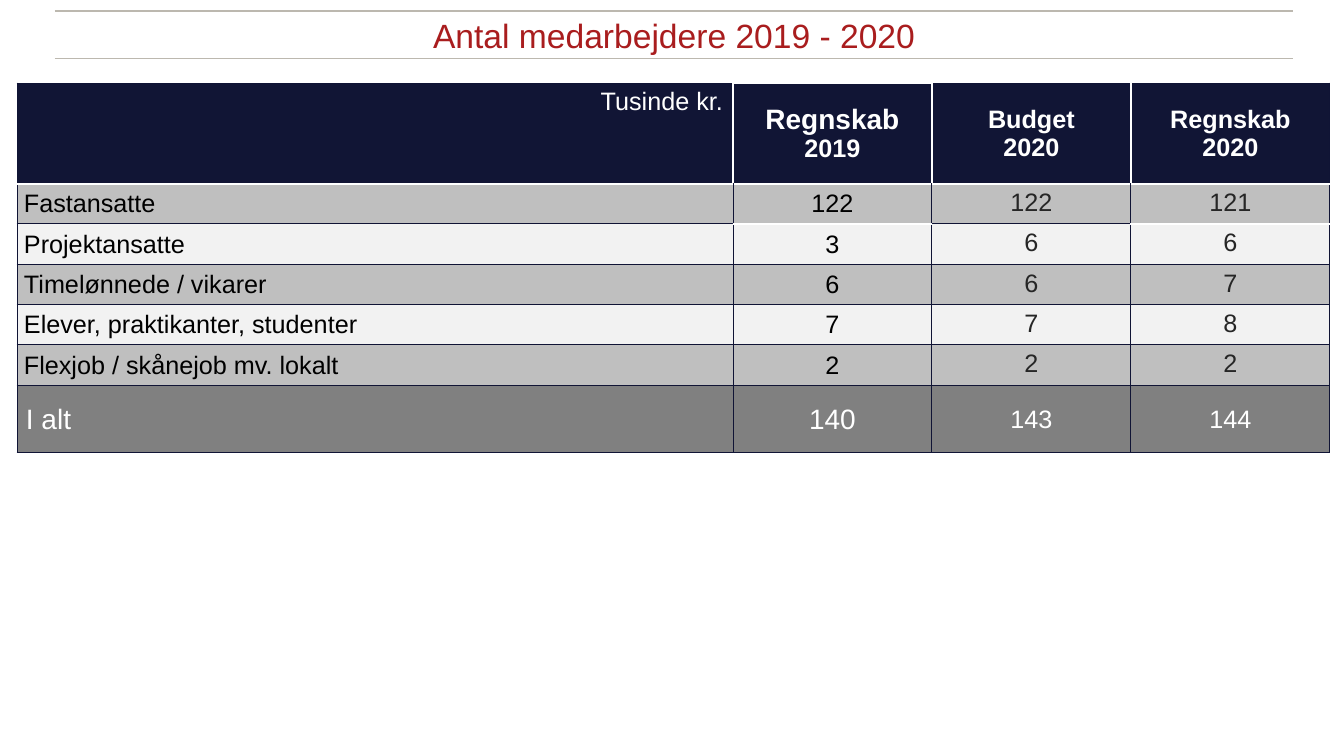
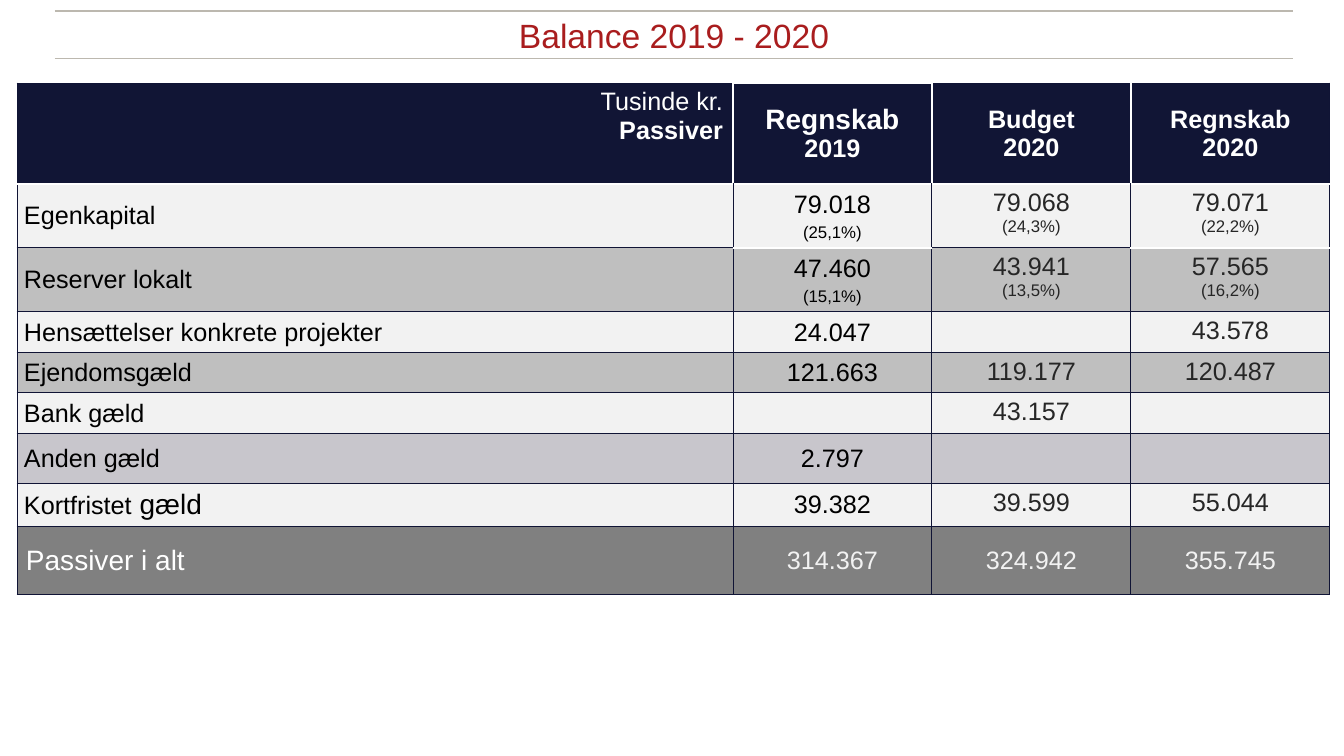
from lxml import etree
from pptx import Presentation
from pptx.dml.color import RGBColor
from pptx.enum.shapes import MSO_CONNECTOR
from pptx.enum.text import MSO_ANCHOR, MSO_AUTO_SIZE, PP_ALIGN
from pptx.oxml.ns import qn
from pptx.util import Pt

LEFT, CENTER, RIGHT = PP_ALIGN.LEFT, PP_ALIGN.CENTER, PP_ALIGN.RIGHT
TOP, MIDDLE = MSO_ANCHOR.TOP, MSO_ANCHOR.MIDDLE
STRAIGHT = MSO_CONNECTOR.STRAIGHT
NO_FIT = MSO_AUTO_SIZE.NONE

# Shared style
FONT = "Arial"
COLORS = {
    "title": "A91D1E", "rule": "BCB8AF", "header": "111535",
    "border": "101435", "white": "FFFFFF", "black": "000000",
    "text": "262626", "light": "F2F2F2", "grey": "BFBFBF",
    "lilac": "C8C6CC", "total": "808080",
}
SLIDE_W, SLIDE_H = 1344, 756
TITLE_BOX = (55, 9, 1238, 52)
RULE_YS = (11, 59)
TABLE_LEFT, TABLE_TOP = 17, 83
COL_WIDTHS = (716, 199, 199, 199)
HEADER_H = 101

# Content: a cell is a list of lines, a line is a string or a list of
# (text, format) runs
BIG, SMALL, BOLD = {"size": 20}, {"size": 12}, {"bold": True}
HEADINGS = [
    [[("Regnskab", {"size": 20, "bold": True})], [("2019", BOLD)]],
    [[("Budget", BOLD)], [("2020", BOLD)]],
    [[("Regnskab", BOLD)], [("2020", BOLD)]],
]


def with_share(value, share):
    return [value, [(share, SMALL)]]


SLIDES = [
    {
        "title": "Antal medarbejdere 2019 - 2020",
        "corner": ["Tusinde kr."],
        "rows": [  # height, fill, label, values
            (40, "grey", ["Fastansatte"], [["122"], ["122"], ["121"]]),
            (41, "light", ["Projektansatte"], [["3"], ["6"], ["6"]]),
            (40, "grey", ["Timelønnede / vikarer"], [["6"], ["6"], ["7"]]),
            (40, "light", ["Elever, praktikanter, studenter"],
             [["7"], ["7"], ["8"]]),
            (41, "grey", ["Flexjob / skånejob mv. lokalt"],
             [["2"], ["2"], ["2"]]),
            (67, "total", [[("I alt", BIG)]],
             [[[("140", BIG)]], ["143"], ["144"]]),
        ],
        "total_color": "white",
    },
    {
        "title": "Balance 2019 - 2020",
        "corner": ["Tusinde kr.", [("Passiver", BOLD)]],
        "rows": [
            (64, "light", ["Egenkapital"],
             [with_share("79.018", "(25,1%)"), with_share("79.068", "(24,3%)"),
              with_share("79.071", "(22,2%)")]),
            (64, "grey", ["Reserver lokalt"],
             [with_share("47.460", "(15,1%)"), with_share("43.941", "(13,5%)"),
              with_share("57.565", "(16,2%)")]),
            (40, "light", ["Hensættelser konkrete projekter"],
             [["24.047"], [], ["43.578"]]),
            (40, "grey", ["Ejendomsgæld"],
             [["121.663"], ["119.177"], ["120.487"]]),
            (41, "light", ["Bank gæld"], [[], ["43.157"], []]),
            (50, "lilac", ["Anden gæld"], [["2.797"], [], []]),
            (43, "light", [[("Kortfristet", {}), (" gæld", BIG)]],
             [["39.382"], ["39.599"], ["55.044"]]),
            (68, "total", [[("Passiver i alt", BIG)]],
             [["314.367"], ["324.942"], ["355.745"]]),
        ],
        "total_color": "light",
    },
]


def px(n):
    return round(n * 914400 / 100.8)


def rgb(name):
    return RGBColor.from_string(COLORS[name])


def set_all(obj, values):
    for name, value in values.items():
        setattr(obj, name, value)


def style_font(font, color, size=18, bold=False):
    set_all(font, {"name": FONT, "size": Pt(size), "bold": bold})
    font.color.rgb = rgb(color)


# Title between two thin rules
def add_title(s, text):
    for y in RULE_YS:
        x, _, w, _ = TITLE_BOX
        line = s.shapes.add_connector(STRAIGHT, px(x), px(y), px(x + w), px(y))
        line.line.color.rgb = rgb("rule")
        line.line.width = Pt(0.75)
        etree.SubElement(line._element.spPr, qn("a:effectLst"))
    title = s.shapes.title
    set_all(title, dict(zip(("left", "top", "width", "height"),
                            map(px, TITLE_BOX))))
    tf = title.text_frame
    set_all(tf, {"word_wrap": True, "auto_size": NO_FIT,
                 "vertical_anchor": MIDDLE})
    set_all(tf, {"margin_" + side: px(6)
                 for side in ("left", "top", "right", "bottom")})
    p = tf.paragraphs[0]
    p.alignment = CENTER
    r = p.add_run()
    r.text = text
    style_font(r.font, "title", 24)


# Borders: the rule for an edge holds for the cells on both its sides
def upright_edge(row, k):
    inner_header = row == 0 and 0 < k < len(COL_WIDTHS)
    return ("white", 1) if inner_header else ("border", 0.75)


def level_edge(k, col):
    if k == 1 and col % 2 == 0:
        return "white", 2
    if k == 1 or (k == 0 and col == 1) or (k == 2 and col % 2):
        return "white", 1
    return "border", 0.75


def set_borders(cell, row, col):
    edges = {"lnL": upright_edge(row, col), "lnR": upright_edge(row, col + 1),
             "lnT": level_edge(row, col), "lnB": level_edge(row + 1, col)}
    tc_pr = cell._tc.get_or_add_tcPr()
    for i, (tag, (color, width)) in enumerate(edges.items()):
        ln = etree.Element(qn("a:" + tag), w=str(Pt(width)))
        fill = etree.SubElement(ln, qn("a:solidFill"))
        etree.SubElement(fill, qn("a:srgbClr"), val=COLORS[color])
        tc_pr.insert(i, ln)


def fill_cell(cell, lines, fill, color, align, anchor, line_gap=0):
    cell.fill.solid()
    cell.fill.fore_color.rgb = rgb(fill)
    cell.vertical_anchor = anchor
    tf = cell.text_frame
    for i, line in enumerate(lines):
        p = tf.add_paragraph() if i else tf.paragraphs[0]
        p.alignment = align
        if i and line_gap:
            p.space_before = Pt(line_gap)
        for text, fmt in [(line, {})] if isinstance(line, str) else line:
            r = p.add_run()
            r.text = text
            style_font(r.font, color, **fmt)


def add_figures(s, content):
    rows = content["rows"]
    heights = [HEADER_H] + [row[0] for row in rows]
    frame = s.shapes.add_table(
        len(heights), len(COL_WIDTHS), px(TABLE_LEFT), px(TABLE_TOP),
        px(sum(COL_WIDTHS)), px(sum(heights)))
    table = frame.table
    set_all(table, {"first_row": False, "horz_banding": False})
    for column, w in zip(table.columns, COL_WIDTHS):
        column.width = px(w)
    for row, h in zip(table.rows, heights):
        row.height = px(h)

    # Header row
    fill_cell(table.cell(0, 0), content["corner"], "header", "white",
              RIGHT, TOP)
    for col, lines in enumerate(HEADINGS, 1):
        fill_cell(table.cell(0, col), lines, "header", "white", CENTER, MIDDLE)

    # Body and total rows
    for i, (_, fill, label, values) in enumerate(rows, 1):
        is_total = fill == "total"
        cell = table.cell(i, 0)
        cell.margin_left = px(9 if is_total else 7)
        fill_cell(cell, label, fill, "white" if is_total else "black",
                  LEFT, MIDDLE)
        for col, lines in enumerate(values, 1):
            first = col == 1
            color = "black" if first else "text"
            if is_total:
                color = content["total_color"]
            fill_cell(table.cell(i, col), lines, fill, color, CENTER,
                      MIDDLE if first or is_total else TOP,
                      3 if first else 0)

    for i in range(len(heights)):
        for col in range(len(COL_WIDTHS)):
            set_borders(table.cell(i, col), i, col)


def main():
    prs = Presentation()
    prs.slide_width, prs.slide_height = px(SLIDE_W), px(SLIDE_H)
    for content in SLIDES:
        s = prs.slides.add_slide(prs.slide_layouts[5])
        add_title(s, content["title"])
        add_figures(s, content)
    prs.save("out.pptx")


if __name__ == "__main__":
    main()
